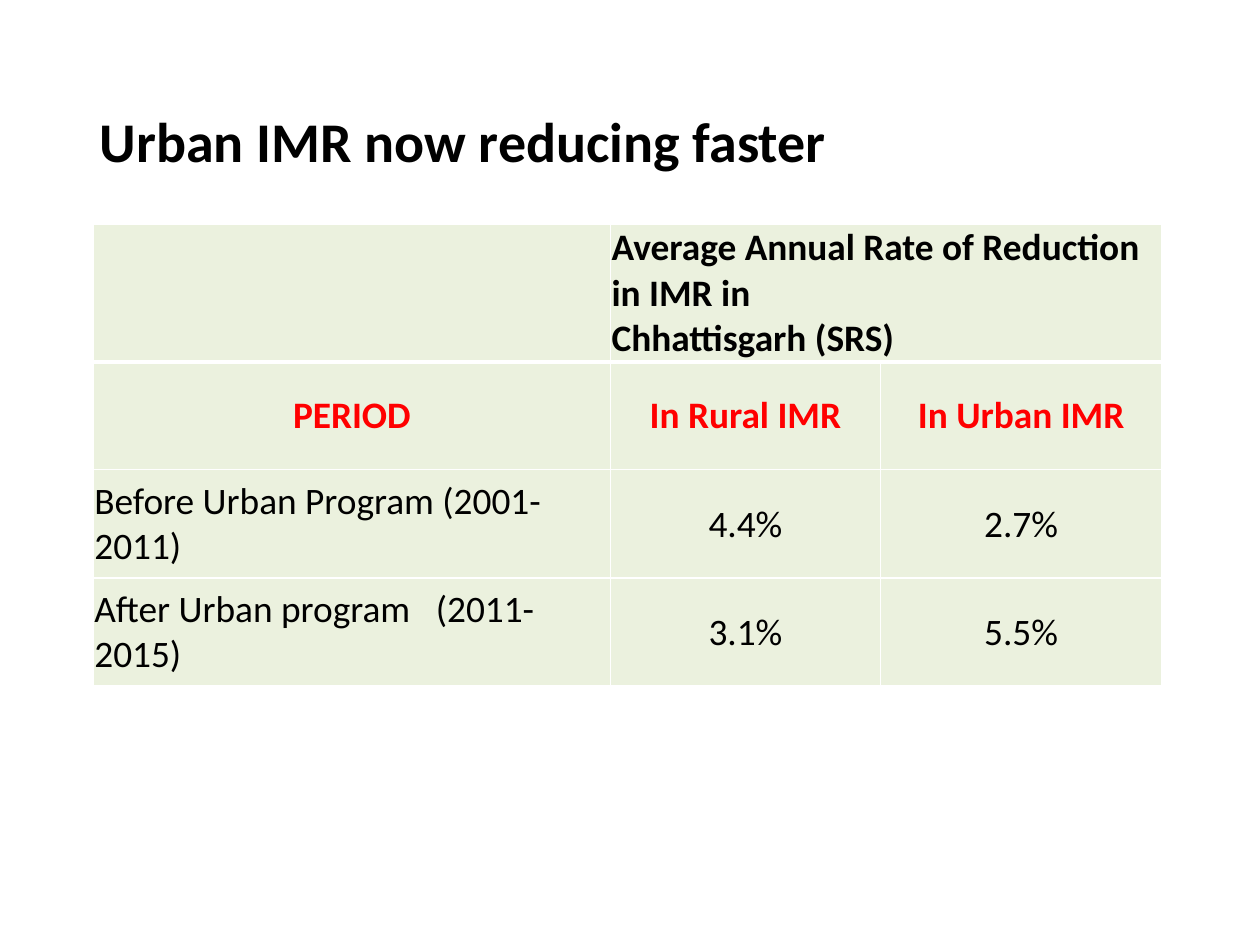
import pptx
import pptx.util
import pptx.dml.color
import pptx.enum.text
import pptx.oxml.ns
import lxml.etree

Pt = pptx.util.Pt
RGB = pptx.dml.color.RGBColor
ALIGN = pptx.enum.text.PP_ALIGN
MIDDLE = pptx.enum.text.MSO_ANCHOR.MIDDLE

BLACK = RGB(0x00, 0x00, 0x00)
RED = RGB(0xFF, 0x00, 0x00)
WHITE = RGB(0xFF, 0xFF, 0xFF)
GREEN = RGB(0xEB, 0xF1, 0xDE)

WIDTHS = [332.5, 173.5, 181]
HEIGHTS = [88, 69.5, 69.5, 69.5]
ROWS = [
    ["", "Average Annual Rate of Reduction in IMR in\nChhattisgarh (SRS)", ""],
    ["PERIOD", "In Rural IMR", "In Urban IMR"],
    ["Before Urban Program (2001-2011)", "4.4%", "2.7%"],
    ["After Urban program\t(2011-2015)", "3.1%", "5.5%"],
]


def add_sub(parent, tag, **attrs):
    return lxml.etree.SubElement(parent, pptx.oxml.ns.qn(tag), attrs)


def write(frame, text, size=24, color=BLACK, bold=False, align=ALIGN.LEFT, tab=None):
    frame.word_wrap = True
    for i, line in enumerate(text.split("\n")):
        para = frame.add_paragraph() if i else frame.paragraphs[0]
        para.alignment = align
        if tab:
            tabs = add_sub(para._p.get_or_add_pPr(), "a:tabLst")
            add_sub(tabs, "a:tab", pos=str(Pt(tab)), algn="l")
        run = para.add_run()
        run.text = line
        font = run.font
        font.name, font.size, font.bold = "Calibri", Pt(size), bold
        font.color.rgb = color


def style(cell, base):
    # Borders come before the fill in the cell properties
    props = cell._tc.get_or_add_tcPr()
    for side, width in (("L", 1), ("R", 1), ("T", 1), ("B", base)):
        line = add_sub(props, "a:ln" + side, w=str(Pt(width)))
        add_sub(add_sub(line, "a:solidFill"), "a:srgbClr", val=str(WHITE))
    cell.fill.solid()
    cell.fill.fore_color.rgb = GREEN
    cell.vertical_anchor = MIDDLE
    cell.margin_left = cell.margin_right = cell.margin_top = Pt(0.7)
    cell.margin_bottom = 0


def add_title(slide, text):
    title = slide.shapes.title
    title.left, title.top = Pt(57), Pt(60)
    title.width, title.height = Pt(690), Pt(60)
    title.text_frame.vertical_anchor = MIDDLE
    write(title.text_frame, text, size=36, bold=True)


def add_grid(slide):
    frame = slide.shapes.add_table(len(ROWS), len(WIDTHS), Pt(60), Pt(144),
                                   Pt(sum(WIDTHS)), Pt(sum(HEIGHTS)))
    table = frame.table
    table.first_row = table.horz_banding = False
    for col, width in zip(table.columns, WIDTHS):
        col.width = Pt(width)
    for row, height in zip(table.rows, HEIGHTS):
        row.height = Pt(height)
    table.cell(0, 1).merge(table.cell(0, 2))
    for r, texts in enumerate(ROWS):
        for c, text in enumerate(texts):
            cell = table.cell(r, c)
            style(cell, 1 if r else 3)
            if text:
                middle = r == 1 or (r > 1 and c > 0)
                write(cell.text_frame, text, bold=r < 2,
                      color=RED if r == 1 else BLACK,
                      align=ALIGN.CENTER if middle else ALIGN.LEFT,
                      tab=219.5 if "\t" in text else None)


def main():
    deck = pptx.Presentation()
    deck.slide_width, deck.slide_height = Pt(810), Pt(612)
    slide = deck.slides.add_slide(deck.slide_layouts[5])
    add_title(slide, "Urban IMR now reducing faster")
    add_grid(slide)
    deck.save("out.pptx")


if __name__ == "__main__":
    main()
